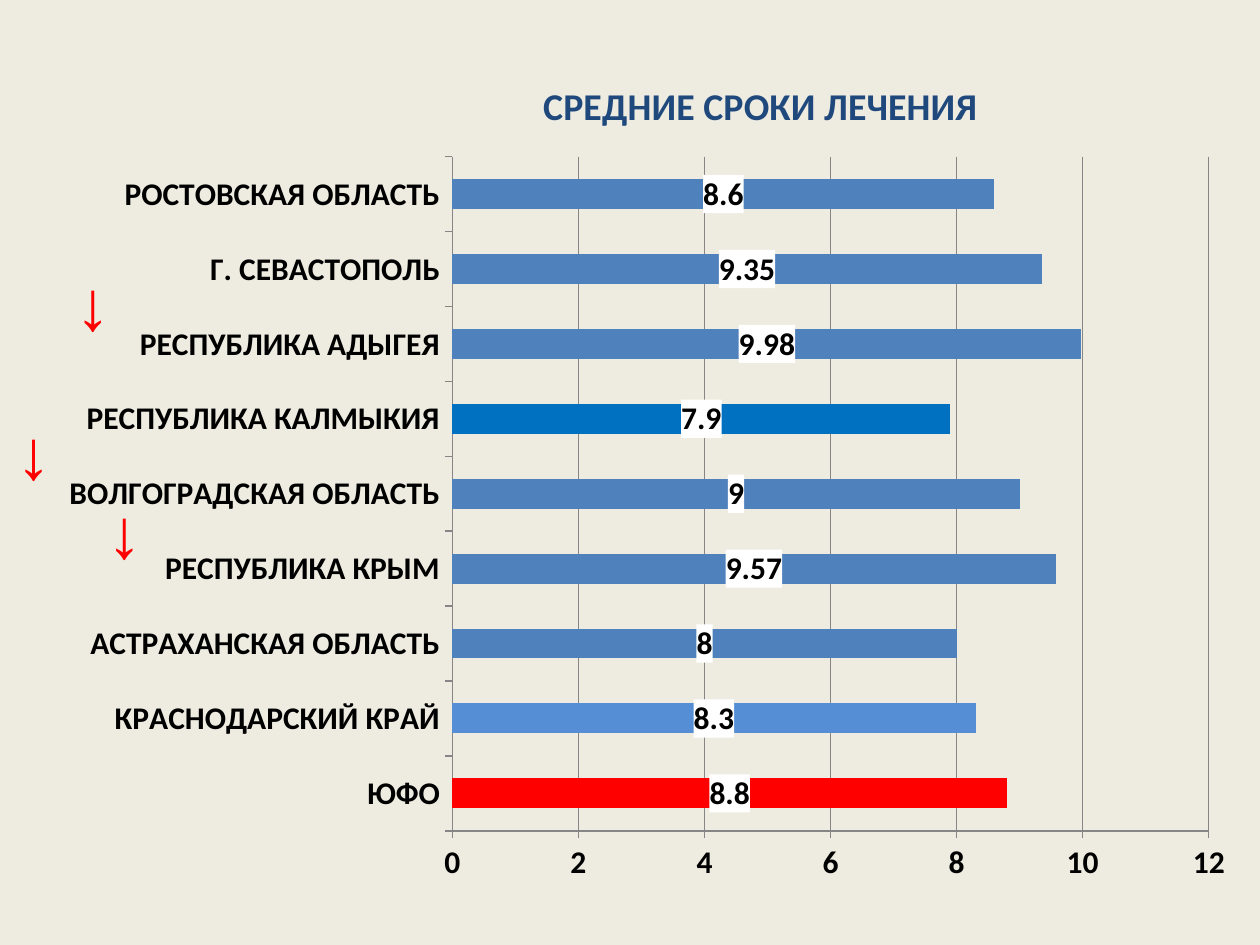
from dataclasses import dataclass

from lxml import etree
from pptx import Presentation
from pptx.chart.data import CategoryChartData
from pptx.dml.color import RGBColor
from pptx.enum.chart import XL_CHART_TYPE, XL_LABEL_POSITION, XL_TICK_MARK
from pptx.enum.text import MSO_AUTO_SIZE, PP_ALIGN
from pptx.oxml.ns import qn
from pptx.util import Inches, Pt

BAR_STACKED = XL_CHART_TYPE.BAR_STACKED
LABEL_CENTER = XL_LABEL_POSITION.CENTER
TICK_OUT, TICK_NONE = XL_TICK_MARK.OUTSIDE, XL_TICK_MARK.NONE
FIT_SHAPE, CENTER = MSO_AUTO_SIZE.SHAPE_TO_FIT_TEXT, PP_ALIGN.CENTER

BACKGROUND = RGBColor(0xEE, 0xEC, 0xE1)
NAVY = RGBColor(0x1F, 0x49, 0x7D)
BLUE = RGBColor(0x4F, 0x81, 0xBD)
LIGHT_BLUE = RGBColor(0x55, 0x8E, 0xD5)
STRONG_BLUE = RGBColor(0x00, 0x70, 0xC0)
RED = RGBColor(0xFF, 0x00, 0x00)
BLACK = RGBColor(0x00, 0x00, 0x00)
GRAY = RGBColor(0x86, 0x86, 0x86)


@dataclass
class Region:
    name: str
    days: float
    color: RGBColor = BLUE


@dataclass
class Arrow:
    left: float
    top: float


REGIONS = [
    Region("ЮФО", 8.8, RED),
    Region("КРАСНОДАРСКИЙ КРАЙ", 8.3, LIGHT_BLUE),
    Region("АСТРАХАНСКАЯ ОБЛАСТЬ", 8),
    Region("РЕСПУБЛИКА КРЫМ", 9.57),
    Region("ВОЛГОГРАДСКАЯ ОБЛАСТЬ", 9),
    Region("РЕСПУБЛИКА КАЛМЫКИЯ", 7.9, STRONG_BLUE),
    Region("РЕСПУБЛИКА АДЫГЕЯ", 9.98),
    Region("Г. СЕВАСТОПОЛЬ", 9.35),
    Region("РОСТОВСКАЯ ОБЛАСТЬ", 8.6),
]
ARROWS = [Arrow(0.43, 2.02), Arrow(-0.04, 3.2), Arrow(0.68, 3.83)]


def set_font(font, size: float, color: RGBColor, name: str = "Calibri") -> None:
    values = {"size": Pt(size), "bold": True, "name": name}
    for key, value in values.items():
        setattr(font, key, value)
    font.color.rgb = color


def place(element, index: int, **values) -> None:
    """Give a chart part a manual layout, in fractions of the chart."""
    for old in element.findall(qn("c:layout")):
        element.remove(old)
    layout = etree.Element(qn("c:layout"))
    manual = etree.SubElement(layout, qn("c:manualLayout"))
    for tag, value in values.items():
        etree.SubElement(manual, qn(f"c:{tag}")).set("val", str(value))
    element.insert(index, layout)


def fill_labels_white(labels) -> None:
    properties = etree.Element(qn("c:spPr"))
    fill = etree.SubElement(properties, qn("a:solidFill"))
    etree.SubElement(fill, qn("a:srgbClr")).set("val", "FFFFFF")
    labels._element.find(qn("c:txPr")).addprevious(properties)


def add_treatment_chart(page) -> None:
    data = CategoryChartData()
    data.categories = [region.name for region in REGIONS]
    data.add_series("Series 1", [region.days for region in REGIONS])
    chart = page.shapes.add_chart(
        BAR_STACKED, Inches(0.35), Inches(0.44), Inches(9.53), Inches(6.69), data
    ).chart
    set_font(chart.font, 18, BLACK)
    chart.has_legend = False

    # Title
    title = chart.chart_title
    title.text_frame.text = "СРЕДНИЕ СРОКИ ЛЕЧЕНИЯ"
    set_font(title.text_frame.paragraphs[0].runs[0].font, 21.6, NAVY)
    place(title._element, 1, xMode="edge", yMode="edge", x=0.41, y=0.02)

    # Bars and their labels
    plot = chart.plots[0]
    plot.gap_width, plot.overlap, plot.vary_by_categories = 150, 100, False
    series = plot.series[0]
    series.format.fill.solid()
    series.format.fill.fore_color.rgb = BLUE
    for index, region in enumerate(REGIONS):
        if region.color != BLUE:
            fill = series.points[index].format.fill
            fill.solid()
            fill.fore_color.rgb = region.color
    labels = series.data_labels
    labels.show_value = True
    labels.position = LABEL_CENTER
    set_font(labels.font, 18, BLACK)
    fill_labels_white(labels)

    # Axes
    for axis in (chart.category_axis, chart.value_axis):
        axis.major_tick_mark, axis.minor_tick_mark = TICK_OUT, TICK_NONE
        axis.format.line.color.rgb = GRAY
        set_font(axis.tick_labels.font, 18, BLACK)
    scale = chart.value_axis
    scale.minimum_scale, scale.maximum_scale, scale.major_unit = 0, 12, 2
    scale.has_major_gridlines = True
    scale.major_gridlines.format.line.color.rgb = GRAY
    plot_area = chart._chartSpace.find(".//" + qn("c:plotArea"))
    place(plot_area, 0, layoutTarget="inner", xMode="edge", yMode="edge",
          x=0.34, y=0.12, w=0.63, h=0.8)


def add_arrow(page, arrow: Arrow) -> None:
    box = page.shapes.add_textbox(
        Inches(arrow.left), Inches(arrow.top), Inches(0.55), Inches(0.77))
    frame = box.text_frame
    frame.word_wrap = False
    frame.auto_size = FIT_SHAPE
    para = frame.paragraphs[0]
    para.alignment = CENTER
    for text, size in ((" ", 18), ("↓", 40)):
        span = para.add_run()
        span.text = text
        set_font(span.font, size, RED, "Times New Roman")


def main() -> None:
    deck = Presentation()
    deck.slide_width, deck.slide_height = Inches(10), Inches(7.5)
    page = deck.slides.add_slide(deck.slide_layouts[6])
    page.background.fill.solid()
    page.background.fill.fore_color.rgb = BACKGROUND
    add_treatment_chart(page)
    for arrow in ARROWS:
        add_arrow(page, arrow)
    deck.save("out.pptx")


if __name__ == "__main__":
    main()
